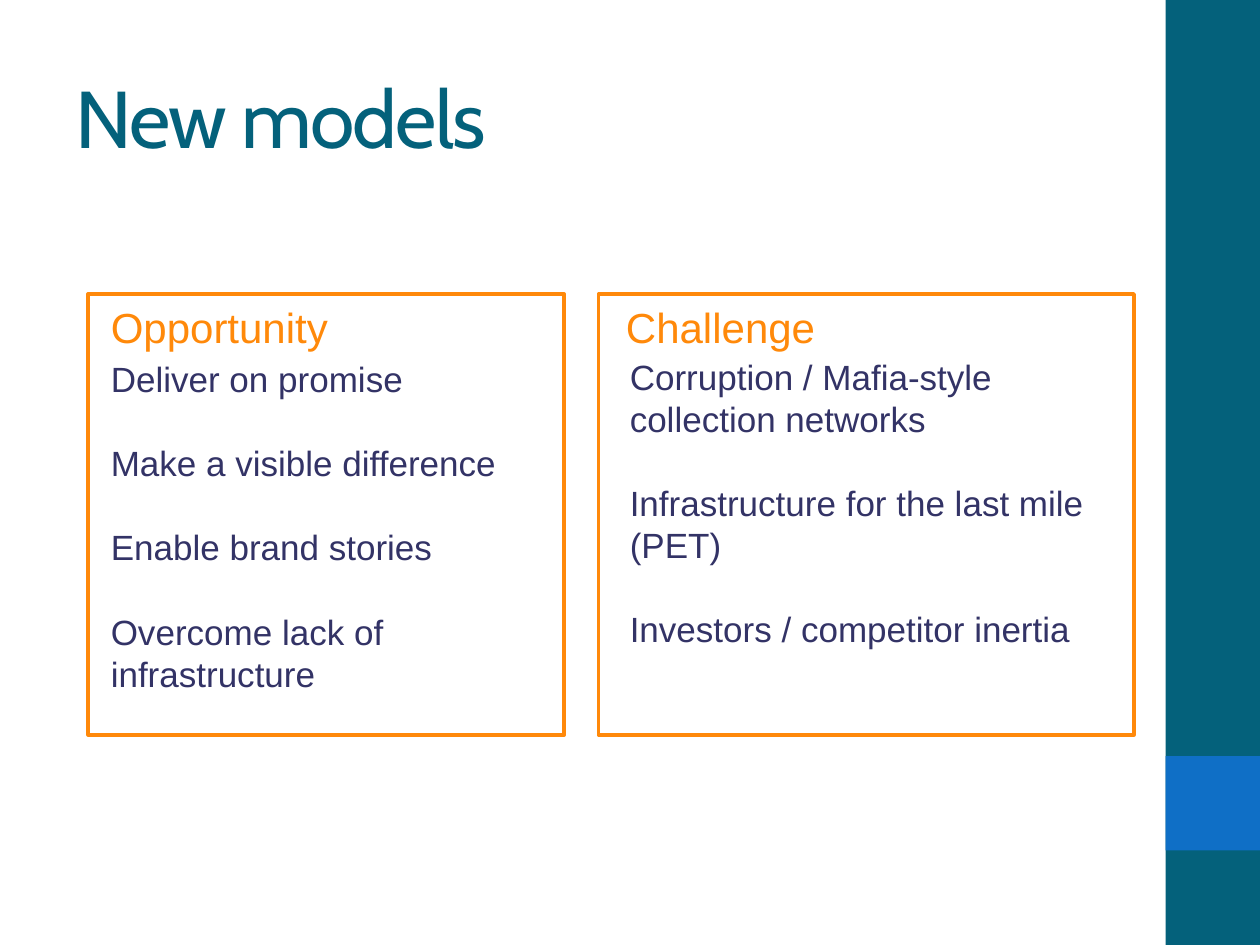
from pptx import Presentation
from pptx.dml.color import RGBColor
from pptx.enum.shapes import MSO_SHAPE as Shape
from pptx.enum.text import MSO_ANCHOR as Anchor, PP_ALIGN as Align
from pptx.util import Pt

TEAL, BLUE, ORANGE, NAVY = "04617B", "0F6FC6", "FF890A", "333366"


def colour(value):
    return RGBColor.from_string(value)


def add_rect(slide, box, fill=None, outline=None):
    rect = slide.shapes.add_shape(Shape.RECTANGLE, *map(Pt, box))
    rect.shadow.inherit = False
    if fill:
        rect.fill.solid()
        rect.fill.fore_color.rgb = colour(fill)
    else:
        rect.fill.background()
    if outline:
        rect.line.color.rgb = colour(outline)
        rect.line.width = Pt(2)
    else:
        rect.line.fill.background()


def add_run(paragraph, text, font, size, value):
    run = paragraph.add_run()
    run.text = text
    run.font.name = font
    run.font.size = Pt(size)
    run.font.color.rgb = colour(value)
    return run


def add_text(slide, box, lines, size, value, pitch, wrap=True):
    frame = slide.shapes.add_textbox(*map(Pt, box)).text_frame
    frame.word_wrap = wrap
    for index, line in enumerate(lines):
        paragraph = frame.paragraphs[0] if index == 0 else frame.add_paragraph()
        paragraph.line_spacing = Pt(pitch)
        if index:
            paragraph.space_before = Pt(pitch)
        add_run(paragraph, line, "Arial", size, value)


def add_sidebar(slide, box):
    left, top, width, height = box
    add_rect(slide, box, fill=TEAL)
    # Square accent, one side above the bottom edge
    add_rect(slide, (left, top + height - 2 * width, width, width), fill=BLUE)


def add_title(slide, box, text):
    title = slide.shapes.title
    title.left, title.top, title.width, title.height = map(Pt, box)
    frame = title.text_frame
    frame.vertical_anchor = Anchor.MIDDLE
    paragraph = frame.paragraphs[0]
    paragraph.alignment = Align.LEFT
    run = add_run(paragraph, text, "Cabin", 46, TEAL)
    run.font._element.set("spc", "-100")


def add_panel(slide, box, heading, heading_inset, points, points_inset):
    left, top, width, height = box
    add_rect(slide, box, outline=ORANGE)
    add_text(slide, (left + heading_inset, top, 140, 36.7), [heading],
             24, ORANGE, 29.5, wrap=False)
    inset_x, inset_y, text_width = points_inset
    add_text(slide, (left + inset_x, top + inset_y, text_width, 200),
             points, 20, NAVY, 24)


def main():
    deck = Presentation()
    deck.slide_width, deck.slide_height = Pt(720), Pt(540)
    slide = deck.slides.add_slide(deck.slide_layouts[5])

    add_sidebar(slide, (666, 0, 54, 540))
    add_title(slide, (36, 21.6, 600, 90), "New models")

    # Two outlined panels side by side
    add_panel(slide, (50.4, 168, 272, 252), "Opportunity", 5.8,
              ["Deliver on promise", "Make a visible difference",
               "Enable brand stories", "Overcome lack of infrastructure"],
              (5.8, 33, 255.6))
    add_panel(slide, (342, 168, 306, 252), "Challenge", 8.6,
              ["Corruption / Mafia-style collection networks",
               "Infrastructure for the last mile (PET)",
               "Investors / competitor inertia"],
              (10.8, 31.5, 283))

    deck.save("out.pptx")


if __name__ == "__main__":
    main()
